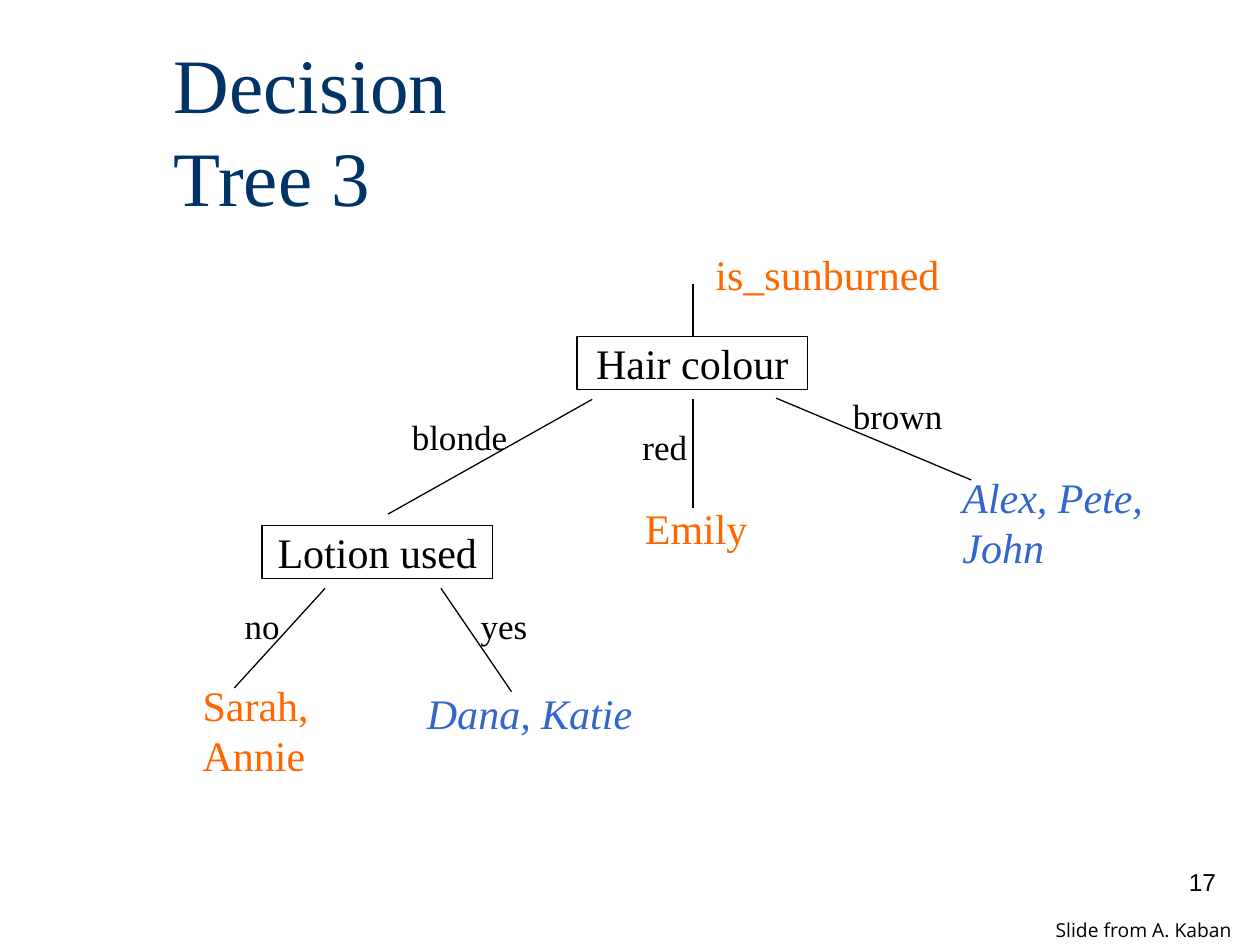
from pptx import Presentation
from pptx.dml.color import RGBColor
from pptx.enum.shapes import MSO_CONNECTOR, MSO_SHAPE
from pptx.enum.text import MSO_ANCHOR, PP_ALIGN
from pptx.oxml.ns import qn
from pptx.util import Inches, Pt
from lxml.etree import SubElement

NAVY = RGBColor(0x00, 0x33, 0x66)
ORANGE = RGBColor(0xFF, 0x66, 0x00)
BLUE = RGBColor(0x33, 0x66, 0xCC)
BLACK = RGBColor(0, 0, 0)
WHITE = RGBColor(0xFF, 0xFF, 0xFF)
SERIF = "Times New Roman"

BRANCHES = [
    (4, 0.35, 4, 0.77),
    (3.2, 1.27, 1.58, 2.18),
    (4, 1.27, 4, 2.13),
    (4.66, 1.26, 6.21, 1.91),
    (1.08, 2.77, 0.36, 3.56),
    (2, 2.77, 2.56, 3.59),
]
QUESTIONS = [("Hair colour", 3.08, 0.77), ("Lotion used", 0.58, 2.27)]
OUTCOMES = [
    ("is_sunburned", 4.08, 0.02, 3.17, 0.5, ORANGE),
    ("Emily", 3.52, 2.04, 1.1, 0.5, ORANGE),
    ("Sarah, Annie", 0.01, 3.44, 1.15, 0.9, ORANGE),
    ("Alex, Pete, John", 6.04, 1.79, 1.83, 0.9, BLUE),
    ("Dana, Katie", 1.79, 3.51, 1.83, 0.5, BLUE),
]
ANSWERS = [
    ("blonde", 1.67, 1.35, PP_ALIGN.LEFT),
    ("red", 3.5, 1.43, PP_ALIGN.LEFT),
    ("brown", 5.17, 1.18, PP_ALIGN.LEFT),
    ("no", 0.08, 2.85, PP_ALIGN.CENTER),
    ("yes", 2, 2.85, PP_ALIGN.CENTER),
]


def write(frame, text, size, color, name=SERIF, italic=False,
          align=PP_ALIGN.LEFT, anchor=MSO_ANCHOR.TOP, wrap=True):
    frame.word_wrap = wrap
    frame.vertical_anchor = anchor
    frame.text = text
    para = frame.paragraphs[0]
    para.alignment = align
    span = para.runs[0]
    formats = {"size": Pt(size), "name": name, "italic": italic, "bold": False}
    for key, value in formats.items():
        setattr(span.font, key, value)
    span.font.color.rgb = color


def add_text(page, box, text, size, color, **options):
    label = page.shapes.add_textbox(*map(Inches, box))
    write(label.text_frame, text, size, color, **options)


def add_title(page, box):
    title = page.shapes.title
    for key, value in zip(("left", "top", "width", "height"), box):
        setattr(title, key, Inches(value))
    write(title.text_frame, "Decision Tree 3", 44, NAVY, anchor=MSO_ANCHOR.MIDDLE)


def add_branch(page, start_x, start_y, end_x, end_y):
    ends = map(Inches, (start_x, start_y, end_x, end_y))
    branch = page.shapes.add_connector(MSO_CONNECTOR.STRAIGHT, *ends)
    branch.line.color.rgb = BLACK
    branch.line.width = Pt(0.75)
    SubElement(branch.element.spPr, qn("a:effectLst"))


def add_question(page, box, text):
    node = page.shapes.add_shape(MSO_SHAPE.RECTANGLE, *map(Inches, box))
    node.shadow.inherit = False
    node.fill.solid()
    node.fill.fore_color.rgb = WHITE
    node.line.color.rgb = BLACK
    node.line.width = Pt(0.75)
    write(node.text_frame, text, 24, BLACK, align=PP_ALIGN.CENTER,
          anchor=MSO_ANCHOR.MIDDLE, wrap=False)


def add_tree(page, left, top):
    for start_x, start_y, end_x, end_y in BRANCHES:
        add_branch(page, left + start_x, top + start_y, left + end_x, top + end_y)
    for text, x, y, width, height, color in OUTCOMES:
        add_text(page, (left + x, top + y, width, height), text, 24, color,
                 italic=color == BLUE)
    for text, x, y in QUESTIONS:
        add_question(page, (left + x, top + y, 1.83, 0.42), text)
    for text, x, y, align in ANSWERS:
        add_text(page, (left + x, top + y, 1, 0.43), text, 20, BLACK, align=align)


def add_footer(page, left, top):
    add_text(page, (left, top, 2.08, 0.5), "17", 14, BLACK, name="Arial",
             align=PP_ALIGN.RIGHT)
    add_text(page, (left + 0.61, top + 0.41, 1.68, 0.29), "Slide from A. Kaban",
             11, BLACK, name="Open Sans", wrap=False)


def main():
    deck = Presentation()
    deck.slide_width, deck.slide_height = Inches(10), Inches(7.5)
    page = deck.slides.add_slide(deck.slide_layouts[5])
    add_title(page, (1.28, 0.35, 2.95, 1.35))
    add_tree(page, 1.5, 1.9)
    add_footer(page, 7.67, 6.83)
    deck.save("out.pptx")


if __name__ == "__main__":
    main()
